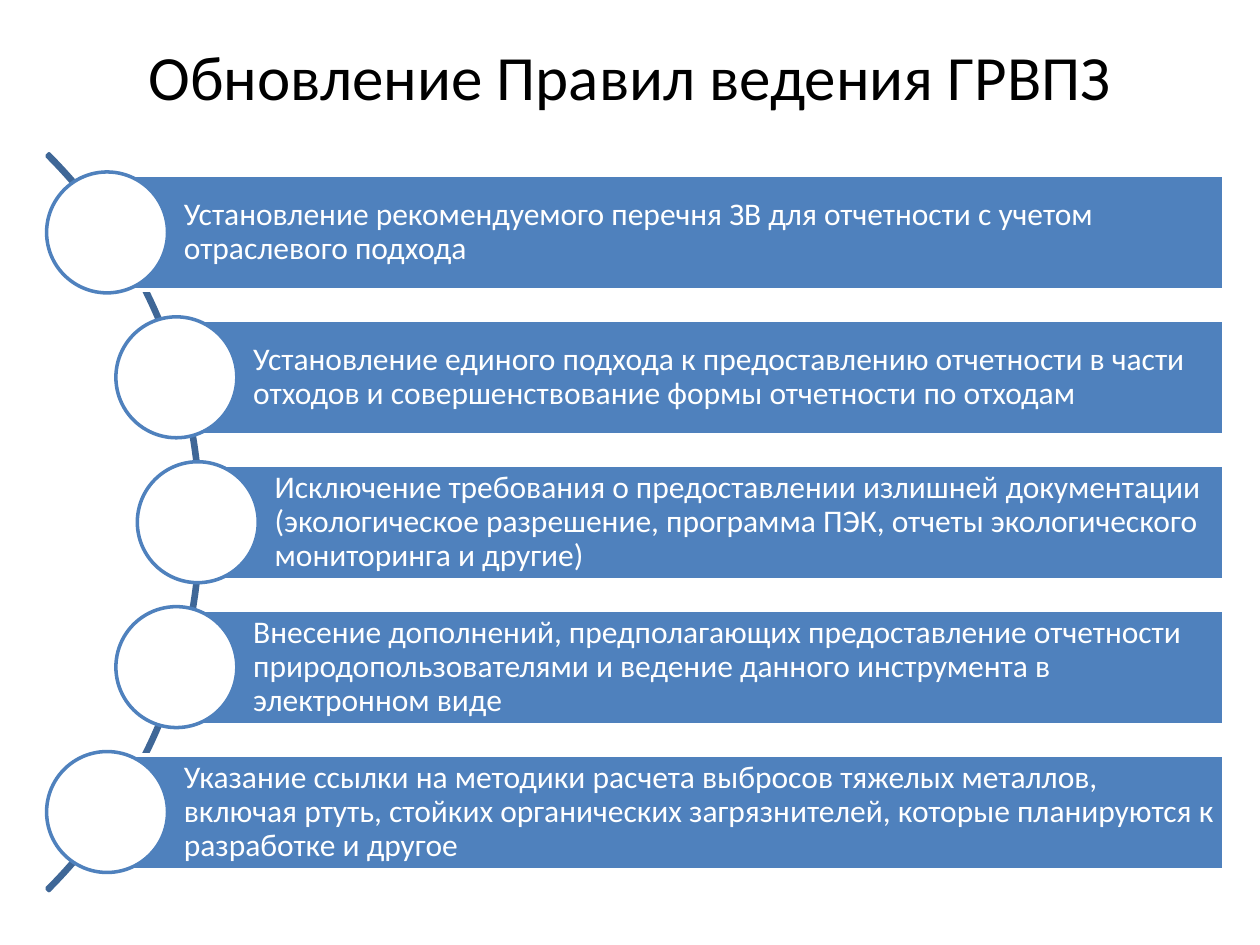
from dataclasses import dataclass

from pptx import Presentation
from pptx.dml.color import RGBColor
from pptx.enum.shapes import MSO_SHAPE
from pptx.enum.text import MSO_ANCHOR, PP_ALIGN
from pptx.shapes.autoshape import Shape
from pptx.shapes.shapetree import GroupShapes
from pptx.slide import Slide
from pptx.text.text import TextFrame
from pptx.util import Inches, Pt

FONT = "Calibri"
BLACK = "000000"
WHITE = "FFFFFF"
BLUE = "4F81BD"
DARK_BLUE = "3F6797"

BAR_RIGHT = 9.71
BAR_HEIGHT = 0.91
CIRCLE_SIZE = 0.96
ARC_SIZE = 8.27
FIRST_CENTER = 1.845
ROW_STEP = 1.15


@dataclass(frozen=True)
class Measure:
    """A list row: the left edge of its bar, in inches, and its wording."""
    left: float
    text: str


MEASURES = [
    Measure(0.85, "Установление рекомендуемого перечня ЗВ для отчетности с учетом "
                  "отраслевого подхода"),
    Measure(1.4, "Установление единого подхода к предоставлению отчетности в части "
                 "отходов и совершенствование формы отчетности по отходам"),
    Measure(1.57, "Исключение требования о предоставлении излишней документации "
                  "(экологическое разрешение, программа ПЭК, отчеты экологического "
                  "мониторинга и другие)"),
    Measure(1.4, "Внесение дополнений, предполагающих предоставление отчетности "
                 "природопользователями и ведение данного инструмента в "
                 "электронном виде"),
    Measure(0.85, "Указание ссылки на методики расчета выбросов тяжелых металлов, "
                  "включая ртуть, стойких органических загрязнителей, которые "
                  "планируются к разработке и другое"),
]


def color(value: str) -> RGBColor:
    return RGBColor.from_string(value)


def add_outlined(shapes: GroupShapes, kind: MSO_SHAPE, left: float, top: float,
                 width: float, height: float, fill: str | None, line: str) -> Shape:
    shape = shapes.add_shape(kind, Inches(left), Inches(top), Inches(width), Inches(height))
    shape.shadow.inherit = False
    if fill is None:
        shape.fill.background()
    else:
        shape.fill.solid()
        shape.fill.fore_color.rgb = color(fill)
    shape.line.color.rgb = color(line)
    shape.line.width = Pt(2)
    return shape


def write_text(frame: TextFrame, text: str, size: int, font_color: str,
               alignment: PP_ALIGN) -> None:
    frame.word_wrap = True
    frame.vertical_anchor = MSO_ANCHOR.MIDDLE
    paragraph = frame.paragraphs[0]
    paragraph.alignment = alignment
    run = paragraph.add_run()
    run.text = text
    run.font.name = FONT
    run.font.size = Pt(size)
    run.font.color.rgb = color(font_color)


def add_title(slide: Slide, text: str) -> None:
    title = slide.shapes.add_textbox(Inches(0.5), Inches(0.13), Inches(9), Inches(0.94))
    write_text(title.text_frame, text, 36, BLACK, PP_ALIGN.CENTER)


def add_arc(shapes: GroupShapes) -> None:
    arc = add_outlined(shapes, MSO_SHAPE.BLOCK_ARC, -6.67, 0.01, ARC_SIZE, ARC_SIZE,
                       None, DARK_BLUE)
    # Start and end angles (315° and 45°), then the relative thickness
    for index, value in enumerate((189, 27, 0.003)):
        arc.adjustments[index] = value


def add_measure(shapes: GroupShapes, measure: Measure, center: float) -> None:
    """Draw a bar and the circle centred on its left edge."""
    bar = add_outlined(shapes, MSO_SHAPE.RECTANGLE, measure.left, center - BAR_HEIGHT / 2,
                       BAR_RIGHT - measure.left, BAR_HEIGHT, BLUE, WHITE)
    frame = bar.text_frame
    frame.margin_left = Inches(0.61)
    frame.margin_top = frame.margin_right = frame.margin_bottom = Inches(0.05)
    write_text(frame, measure.text, 18, WHITE, PP_ALIGN.LEFT)
    frame.paragraphs[0].line_spacing = 0.9

    radius = CIRCLE_SIZE / 2
    add_outlined(shapes, MSO_SHAPE.OVAL, measure.left - radius, center - radius,
                 CIRCLE_SIZE, CIRCLE_SIZE, WHITE, BLUE)


def main() -> None:
    presentation = Presentation()
    presentation.slide_width = Inches(10)
    presentation.slide_height = Inches(7.5)
    slide = presentation.slides.add_slide(presentation.slide_layouts[6])

    add_title(slide, "Обновление Правил ведения ГРВПЗ")
    diagram = slide.shapes.add_group_shape().shapes
    add_arc(diagram)
    for row, measure in enumerate(MEASURES):
        add_measure(diagram, measure, FIRST_CENTER + row * ROW_STEP)

    presentation.save("out.pptx")


if __name__ == "__main__":
    main()
